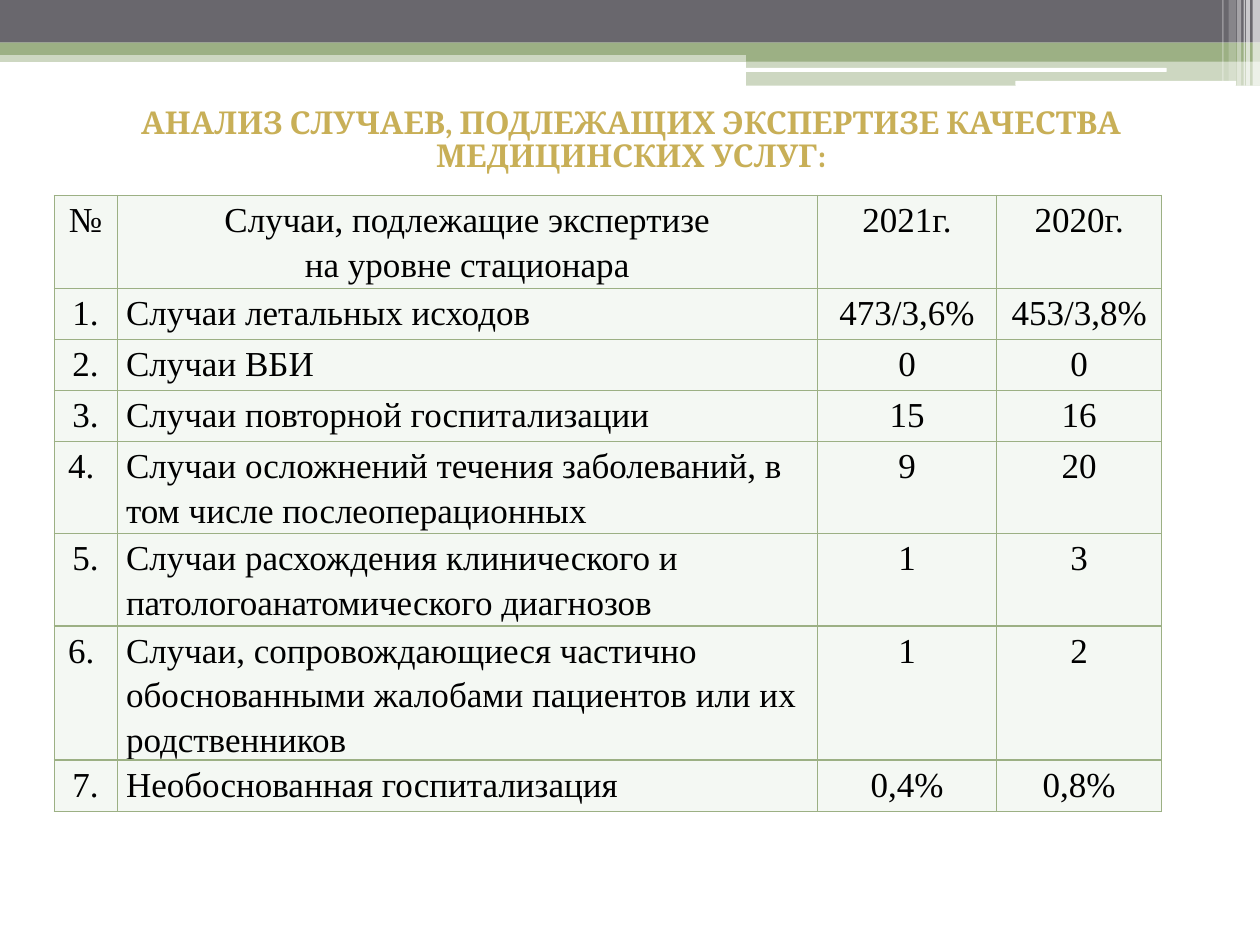
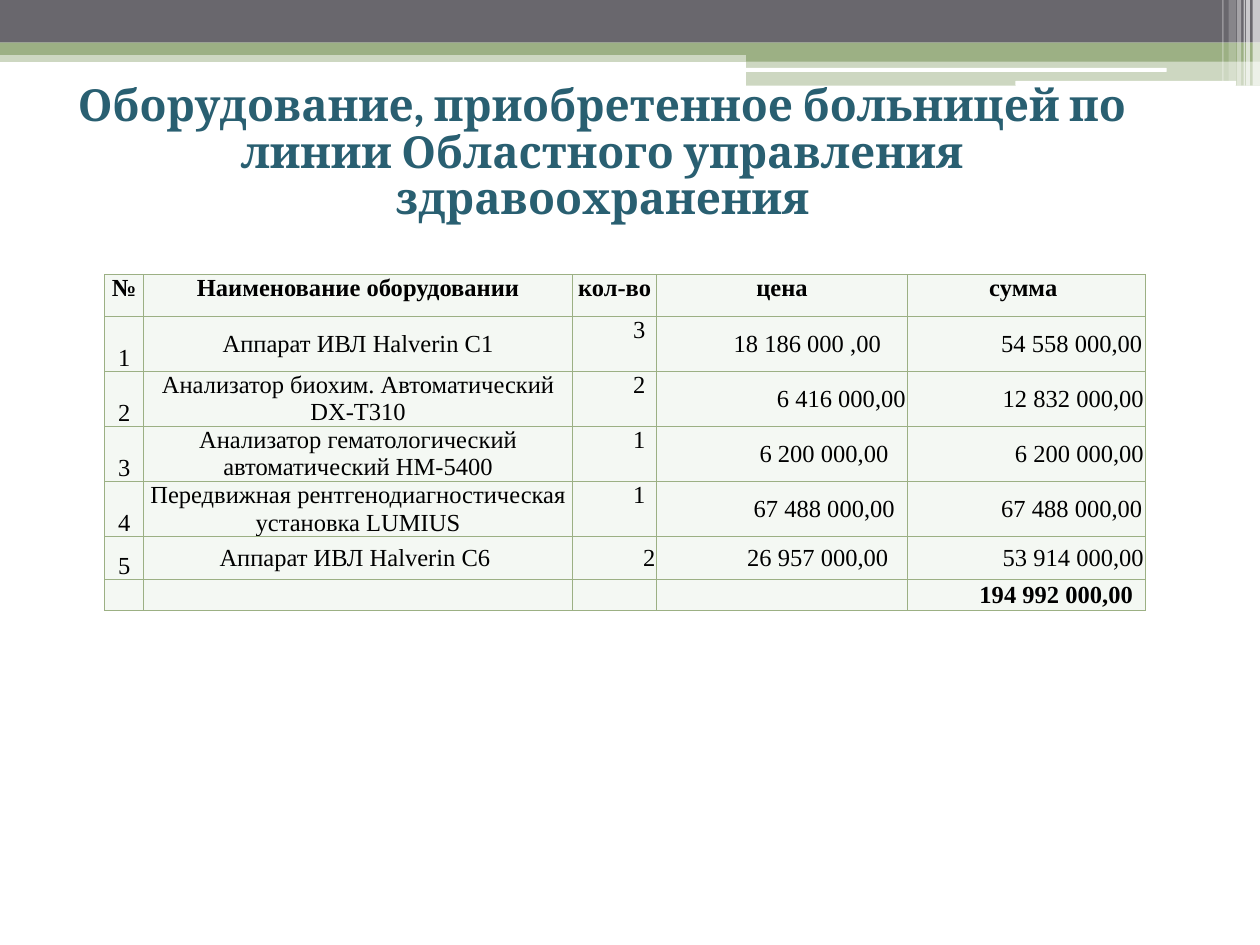
from dataclasses import dataclass

from lxml.etree import SubElement
from pptx import Presentation
from pptx.dml.color import RGBColor
from pptx.enum.shapes import MSO_SHAPE
from pptx.enum.text import MSO_ANCHOR, MSO_AUTO_SIZE, PP_ALIGN
from pptx.oxml import parse_xml
from pptx.oxml.ns import nsdecls, qn
from pptx.util import Cm, Pt

HUES = {
    "grey": "69676D",
    "green": "9CB084",
    "white": "FFFFFF",
    "black": "000000",
    "cell": "F4F8F3",
    "gold": "C8AF57",
    "teal": "295F71",
}
LEFT, MID, RIGHT = PP_ALIGN.LEFT, PP_ALIGN.CENTER, PP_ALIGN.RIGHT
TOP, HALF, BASE = MSO_ANCHOR.TOP, MSO_ANCHOR.MIDDLE, MSO_ANCHOR.BOTTOM


@dataclass
class Band:
    box: tuple[float, float, float, float]
    hue: str
    alpha: int = 100
    kind: MSO_SHAPE = MSO_SHAPE.RECTANGLE


@dataclass
class Title:
    text: str
    box: tuple[float, float, float, float]
    size: float
    hue: str
    foot: float  # bottom inset, lifts the text


@dataclass
class Entry:
    text: str
    align: PP_ALIGN = MID
    anchor: MSO_ANCHOR = TOP
    bold: bool = False
    pad: float = 0  # extra right inset


@dataclass
class Grid:
    left: float
    top: float
    cols: list[float]
    rows: list[float]
    cells: list[list[Entry]]
    size: int
    side: float
    space: float


# Header bands, then the pale stripes in the right corner
ROUND = MSO_SHAPE.ROUNDED_RECTANGLE
BANDS = [
    Band((0, 1.02, 25.4, 0.23), "green", 50),
    Band((0, 0, 25.4, 0.86), "grey"),
    Band((0, 0.86, 25.4, 0.25), "green"),
    Band((15.04, 0.99, 10.36, 0.25), "green"),
    Band((15.04, 1.22, 10.36, 0.51), "green", 50),
    Band((15.01, 1.37, 8.51, 0.08), "white", kind=ROUND),
    Band((20.47, 1.63, 4.45, 0.1), "white", kind=ROUND),
] + [
    Band((left, 0, width, height), "white", alpha)
    for left, width, height, alpha in [
        (25.25, 0.15, 1.73, 65),
        (25.12, 0.08, 1.73, 65),
        (25.07, 0.03, 1.73, 60),
        (24.94, 0.08, 1.73, 40),
        (24.77, 0.15, 1.63, 20),
        (24.64, 0.03, 1.63, 30),
    ]
]

# Slide 1: cases under review
CASES = [
    ("№", "Случаи, подлежащие экспертизе\nна уровне стационара", "2021г.", "2020г."),
    ("1.", "Случаи летальных исходов", "473/3,6%", "453/3,8%"),
    ("2.", "Случаи ВБИ", "0", "0"),
    ("3.", "Случаи повторной госпитализации", "15", "16"),
    ("4. ", "Случаи осложнений течения заболеваний, в том числе послеоперационных", "9", "20"),
    ("5.", "Случаи расхождения клинического и патологоанатомического диагнозов", "1", "3"),
    ("6. ", "Случаи, сопровождающиеся частично обоснованными жалобами пациентов "
     "или их родственников", "1", "2"),
    ("7.", "Необоснованная госпитализация", "0,4%", "0,8%"),
]

# Slide 2: devices, with right insets for count, price and sum
HEADS = ["№", "Наименование оборудовании", "кол-во", "цена", "сумма "]
TOOLS = [
    ("Аппарат ИВЛ Halverin C1", "3", "18 186 000 ,00", "54 558 000,00", (0.2, 0.5, 0.03)),
    ("Анализатор биохим. Автоматический DX-T310", "2", "6 416 000,00", "12 832 000,00",
     (0.2, 0, 0)),
    ("Анализатор гематологический автоматический HM-5400", "1", "6 200 000,00",
     "6 200 000,00", (0.2, 0.35, 0)),
    ("Передвижная рентгенодиагностическая установка LUMIUS", "1", "67 488 000,00",
     "67 488 000,00", (0.2, 0.22, 0.03)),
    ("Аппарат ИВЛ Halverin C6 ", "2", "26 957 000,00", "53 914 000,00", (0, 0.35, 0)),
]


def case_cells() -> list[list[Entry]]:
    return [
        [Entry(text, LEFT if row and col == 1 else MID) for col, text in enumerate(line)]
        for row, line in enumerate(CASES)
    ]


def tool_cells() -> list[list[Entry]]:
    cells = [[Entry(head, bold=True) for head in HEADS]]
    for num, (name, count, price, total, pads) in enumerate(TOOLS, 1):
        cells.append([
            Entry(str(num), anchor=BASE),
            Entry(name, anchor=HALF),
            Entry(count, RIGHT, TOP if pads[0] else HALF, pad=pads[0]),
            Entry(price, RIGHT, HALF, pad=pads[1]),
            Entry(total, RIGHT, HALF, pad=pads[2]),
        ])
    blanks = [Entry("") for _ in HEADS[1:]]
    cells.append(blanks + [Entry("194 992 000,00", RIGHT, HALF, True, 0.22)])
    return cells


def paint(hue: str) -> RGBColor:
    return RGBColor.from_string(HUES[hue])


def draw_band(slide, band: Band):
    shape = slide.shapes.add_shape(band.kind, *map(Cm, band.box))
    shape.shadow.inherit = False
    shape.fill.solid()
    shape.fill.fore_color.rgb = paint(band.hue)
    shape.line.fill.background()
    if band.alpha < 100:
        color = shape.fill._xPr.find(qn("a:solidFill"))[0]
        SubElement(color, qn("a:alpha"), val=str(band.alpha * 1000))
    return shape


def share_bands(slide) -> None:
    """Draw the bands once and move them to the layout."""
    tree = slide.slide_layout.shapes._spTree
    for spot, band in enumerate(BANDS, 2):
        tree.insert(spot, draw_band(slide, band)._element)


def draw_title(slide, title: Title) -> None:
    shape = slide.shapes.title
    shape.left, shape.top, shape.width, shape.height = map(Cm, title.box)
    frame = shape.text_frame
    frame.text = title.text
    frame.word_wrap = True
    frame.auto_size = MSO_AUTO_SIZE.NONE
    frame.vertical_anchor = HALF
    frame.margin_bottom = Cm(title.foot)
    para = frame.paragraphs[0]
    para.alignment = MID
    para.line_spacing = 0.88
    font = para.runs[0].font
    font.name, font.size, font.bold = "Cambria", Pt(title.size), True
    font.color.rgb = paint(title.hue)


def edge_cell(cell) -> None:
    props = cell._tc.get_or_add_tcPr()
    for spot, side in enumerate("LRTB"):
        props.insert(spot, parse_xml(
            f'<a:ln{side} {nsdecls("a")} w="9525"><a:solidFill>'
            f'<a:srgbClr val="{HUES["green"]}"/></a:solidFill></a:ln{side}>'))


def fill_cell(cell, entry: Entry, grid: Grid) -> None:
    cell.fill.solid()
    cell.fill.fore_color.rgb = paint("cell")
    edge_cell(cell)
    cell.margin_left = Cm(grid.side)
    cell.margin_right = Cm(grid.side + entry.pad)
    cell.margin_top = cell.margin_bottom = 0
    cell.vertical_anchor = entry.anchor
    cell.text_frame.text = entry.text
    for para in cell.text_frame.paragraphs:
        para.alignment = entry.align
        para.line_spacing = grid.space
        for run in para.runs:
            font = run.font
            font.name, font.size, font.bold = "Times New Roman", Pt(grid.size), entry.bold
            font.color.rgb = paint("black")
        if not para.runs:  # keeps an empty row low
            SubElement(para._p, qn("a:endParaRPr"), sz=str(grid.size * 100))


def draw_grid(slide, grid: Grid) -> None:
    table = slide.shapes.add_table(
        len(grid.rows), len(grid.cols), Cm(grid.left), Cm(grid.top),
        Cm(sum(grid.cols)), Cm(sum(grid.rows))).table
    table.first_row = table.horz_banding = False
    for col, width in zip(table.columns, grid.cols):
        col.width = Cm(width)
    for row, height, line in zip(table.rows, grid.rows, grid.cells):
        row.height = Cm(height)
        for cell, entry in zip(row.cells, line):
            fill_cell(cell, entry, grid)


PAGES = [
    (
        Title("АНАЛИЗ СЛУЧАЕВ, ПОДЛЕЖАЩИХ ЭКСПЕРТИЗЕ КАЧЕСТВА МЕДИЦИНСКИХ УСЛУГ:",
              (1.09, 1.73, 23.27, 2.97), 18, "gold", 0.87),
        Grid(1.09, 3.94, [1.27, 14.12, 3.61, 3.33],
             [1.87, 1.03, 1.03, 1.03, 1.86, 1.86, 2.69, 1.03],
             case_cells(), 20, 0.18, 1.15),
    ),
    (
        Title("Оборудование, приобретенное больницей по линии Областного "
              "управления здравоохранения",
              (0.71, 2.13, 22.86, 2.97), 25.2, "teal", 1.13),
        Grid(2.11, 5.54, [0.79, 8.64, 1.7, 5.05, 4.8],
             [0.84] + [1.11] * 4 + [0.86, 0.62],
             tool_cells(), 14, 0.03, 1),
    ),
]


def main() -> None:
    deck = Presentation()
    deck.slide_width, deck.slide_height = Cm(25.4), Cm(19.05)
    for num, (title, grid) in enumerate(PAGES):
        slide = deck.slides.add_slide(deck.slide_layouts[5])
        if num == 0:
            share_bands(slide)
        draw_title(slide, title)
        draw_grid(slide, grid)
    deck.save("out.pptx")


if __name__ == "__main__":
    main()
